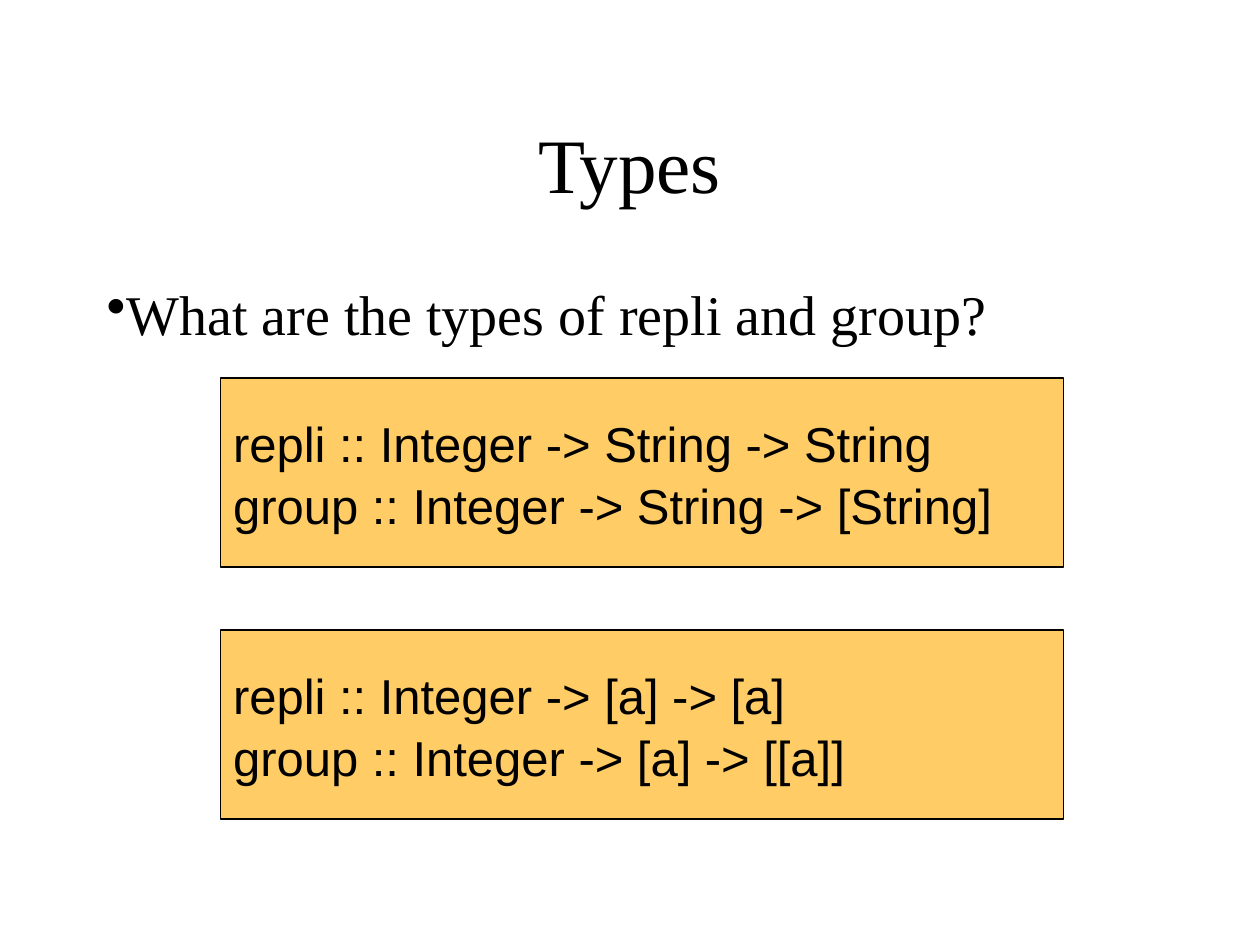
import pptx
import pptx.util
import pptx.dml.color
import pptx.enum.shapes
import pptx.enum.text
import pptx.oxml
import pptx.oxml.ns

Cm = pptx.util.Cm
Pt = pptx.util.Pt
PP_ALIGN = pptx.enum.text.PP_ALIGN
MSO_ANCHOR = pptx.enum.text.MSO_ANCHOR

BLACK = pptx.dml.color.RGBColor(0x00, 0x00, 0x00)
AMBER = pptx.dml.color.RGBColor(0xFF, 0xCC, 0x66)

TITLE = "Types"
QUESTION = "What are the types of repli and group?"
SIGNATURES = [
    ["repli :: Integer -> String -> String",
     "group :: Integer -> String -> [String]"],
    ["repli :: Integer -> [a] -> [a]",
     "group :: Integer -> [a] -> [[a]]"],
]

TEXT_LEFT, TEXT_WIDTH = Cm(1.9), Cm(21.59)
BOX_LEFT, BOX_TOP = Cm(4.45), Cm(7.62)
BOX_WIDTH, BOX_HEIGHT = Cm(16.99), Cm(3.81)
BOX_PITCH = Cm(5.08)


def write_lines(shape, lines, font, size, anchor, align=PP_ALIGN.LEFT, wrap=True):
    """Fill the shape with one paragraph per line and return the paragraphs."""
    frame = shape.text_frame
    frame.word_wrap = wrap
    frame.vertical_anchor = anchor
    for _ in lines[1:]:
        frame.add_paragraph()
    for paragraph, line in zip(frame.paragraphs, lines):
        paragraph.alignment = align
        run = paragraph.add_run()
        run.text = line
        run.font.name = font
        run.font.size = Pt(size)
        run.font.color.rgb = BLACK
    return frame.paragraphs


def add_bullet(paragraph):
    properties = paragraph._p.get_or_add_pPr()
    properties.append(pptx.oxml.parse_xml(
        f'<a:buChar {pptx.oxml.ns.nsdecls("a")} char="•"/>'))


def add_signature_box(slide, top, lines):
    box = slide.shapes.add_shape(
        pptx.enum.shapes.MSO_SHAPE.RECTANGLE, BOX_LEFT, top, BOX_WIDTH, BOX_HEIGHT)
    box.shadow.inherit = False
    box.fill.solid()
    box.fill.fore_color.rgb = AMBER
    box.line.color.rgb = BLACK
    box.line.width = Pt(0.75)
    for paragraph in write_lines(box, lines, "Arial", 28, MSO_ANCHOR.MIDDLE, wrap=False):
        paragraph.line_spacing = 1.05


def main():
    presentation = pptx.Presentation()
    presentation.slide_width = Cm(25.4)
    presentation.slide_height = Cm(19.05)
    slide = presentation.slides.add_slide(presentation.slide_layouts[6])

    title = slide.shapes.add_textbox(TEXT_LEFT, Cm(1.7), TEXT_WIDTH, Cm(3.18))
    write_lines(title, [TITLE], "Times New Roman", 44, MSO_ANCHOR.MIDDLE, PP_ALIGN.CENTER)

    body = slide.shapes.add_textbox(TEXT_LEFT, Cm(5.51), TEXT_WIDTH, Cm(11.43))
    question = write_lines(body, [QUESTION], "Times New Roman", 32, MSO_ANCHOR.TOP)[0]
    question.space_before = Pt(8)
    add_bullet(question)

    for index, lines in enumerate(SIGNATURES):
        add_signature_box(slide, BOX_TOP + index * BOX_PITCH, lines)

    presentation.save("out.pptx")


if __name__ == "__main__":
    main()
